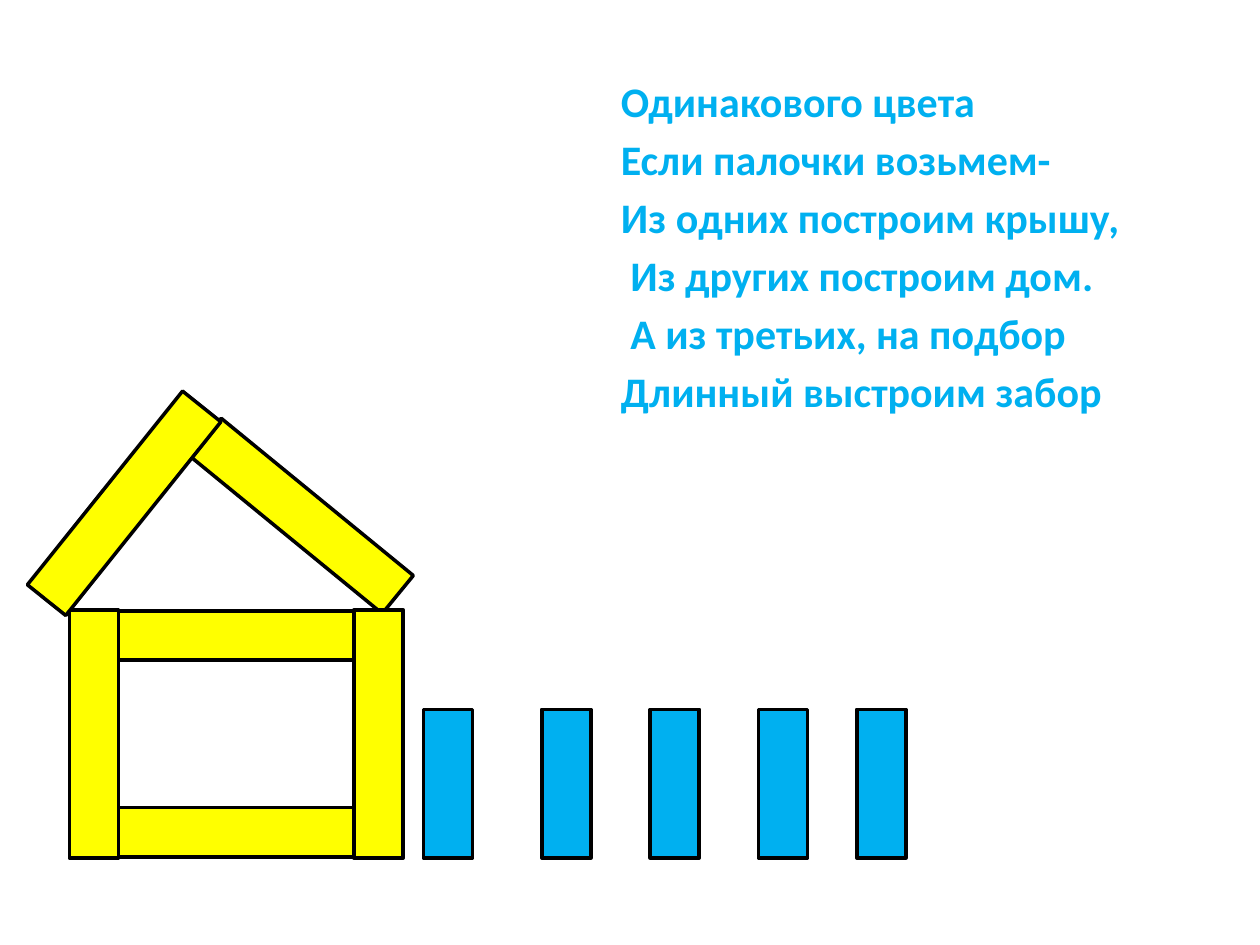
from pptx import Presentation
from pptx.dml.color import RGBColor
from pptx.enum.shapes import MSO_SHAPE
from pptx.util import Inches, Pt

COLORS = {"house": "FFFF00", "sky": "00B0F0", "outline": "000000"}
STICK_WIDTH = Inches(0.39)
LONG_STICK = Inches(1.97)
SHORT_STICK = Inches(1.18)

POEM = [
    "Одинакового цвета",
    "Если палочки возьмем-",
    "Из одних построим крышу,",
    " Из других построим дом.",
    " А из третьих, на подбор",
    "Длинный выстроим забор",
]


def add_stick(slide, left, top, length, color, rotation=0):
    stick = slide.shapes.add_shape(MSO_SHAPE.RECTANGLE, left, top, STICK_WIDTH, length)
    stick.rotation = rotation
    stick.shadow.inherit = False
    stick.fill.solid()
    stick.fill.fore_color.rgb = RGBColor.from_string(COLORS[color])
    stick.line.color.rgb = RGBColor.from_string(COLORS["outline"])
    stick.line.width = Pt(2)


def add_poem(slide, left, top, width, height):
    frame = slide.shapes.add_textbox(left, top, width, height).text_frame
    frame.word_wrap = True
    for index, line in enumerate(POEM):
        paragraph = frame.paragraphs[0] if index == 0 else frame.add_paragraph()
        paragraph.text = line
        properties = paragraph._p.get_or_add_pPr()
        properties.set("marL", str(Inches(0.38)))
        properties.set("indent", "0")
        if index:
            paragraph.space_before = Pt(4.3)
        font = paragraph.font
        font.name = "Calibri"
        font.size = Pt(24)
        font.bold = True
        font.color.rgb = RGBColor.from_string(COLORS["sky"])


def add_house(slide, left, top):
    """Build the house from long sticks: right roof, beams, walls, left roof."""
    sticks = [
        (1.65, 0.1, 309.3),
        (1.1, 2.61, 90),
        (1.17, 1.05, 270),
        (2.26, 1.83, 0),
        (0, 1.83, 0),
        (0.24, 0, 38.7),
    ]
    for x, y, rotation in sticks:
        add_stick(slide, left + Inches(x), top + Inches(y), LONG_STICK, "house", rotation)


def add_fence(slide, left, top):
    for offset in (0, 0.94, 1.8, 2.66, 3.44):
        add_stick(slide, left + Inches(offset), top, SHORT_STICK, "sky")


def main():
    presentation = Presentation()
    presentation.slide_width = Inches(10)
    presentation.slide_height = Inches(7.5)
    slide = presentation.slides.add_slide(presentation.slide_layouts[6])
    add_poem(slide, Inches(4.45), Inches(0.55), Inches(4.92), Inches(2.89))
    add_house(slide, Inches(0.55), Inches(3.01))
    add_fence(slide, Inches(3.36), Inches(5.63))
    presentation.save("out.pptx")


if __name__ == "__main__":
    main()
